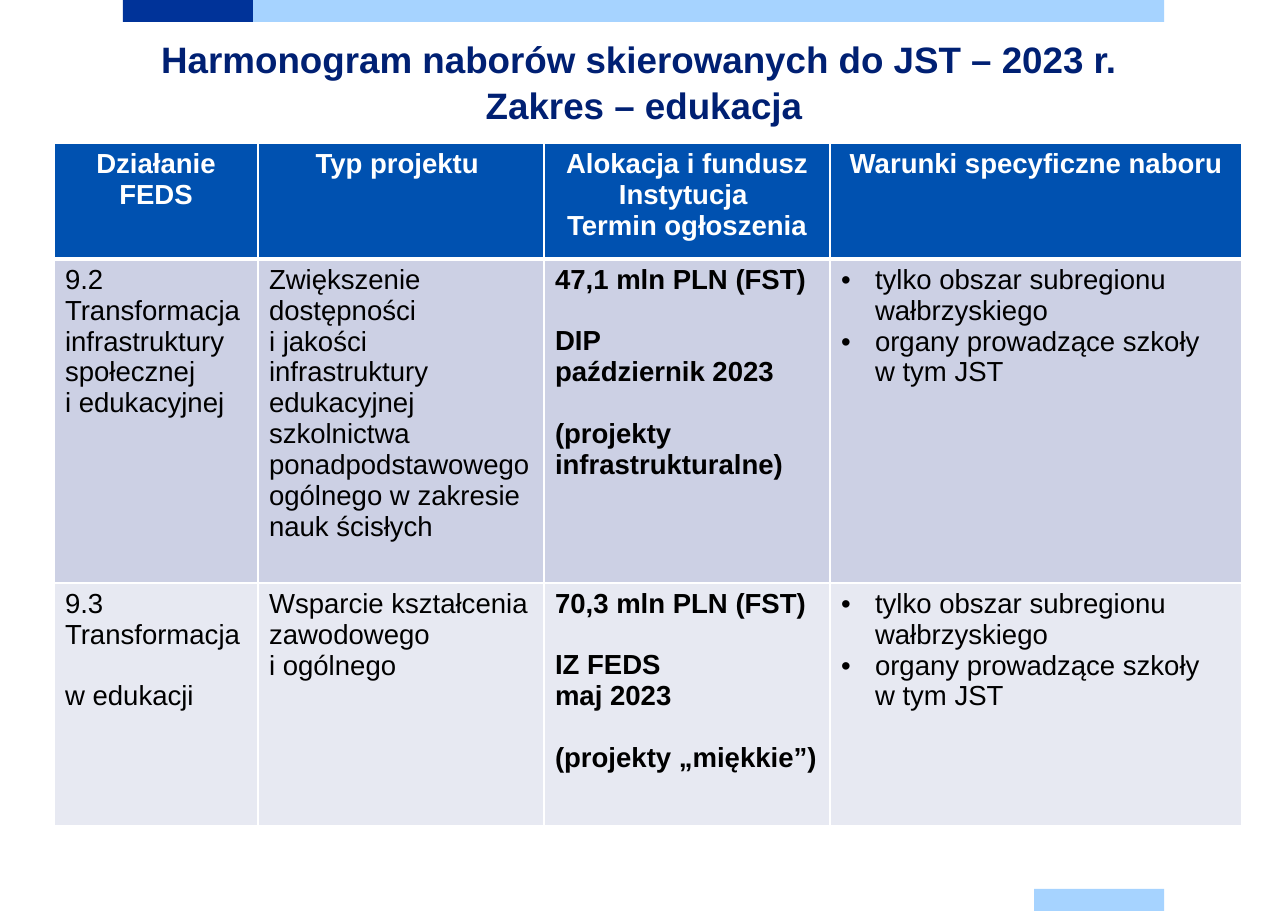
from lxml import etree
from pptx import Presentation
from pptx.dml.color import RGBColor
from pptx.enum.shapes import MSO_SHAPE
from pptx.enum.text import MSO_ANCHOR, MSO_AUTO_SIZE, PP_ALIGN
from pptx.oxml.ns import qn
from pptx.util import Emu, Pt

PX = 8298
RECTANGLE = MSO_SHAPE.RECTANGLE
LEFT, CENTER = PP_ALIGN.LEFT, PP_ALIGN.CENTER
MIDDLE = MSO_ANCHOR.MIDDLE
NO_AUTOFIT = MSO_AUTO_SIZE.NONE

WHITE = RGBColor(0xFF, 0xFF, 0xFF)
BLACK = RGBColor(0x00, 0x00, 0x00)
NAVY = RGBColor(0x00, 0x20, 0x73)
DARK_BLUE = RGBColor(0x00, 0x33, 0x99)
LIGHT_BLUE = RGBColor(0xA6, 0xD3, 0xFF)
HEADER_BLUE = RGBColor(0x00, 0x51, 0xB0)
ROW_FILLS = [HEADER_BLUE, RGBColor(0xCC, 0xD0, 0xE4), RGBColor(0xE7, 0xE9, 0xF2)]

BLANK_LINE = 20
BULLET_INDENT = 34
COLUMN_WIDTHS = [204, 286, 286, 412]
ROW_HEIGHTS = [116, 324, 243]

HEADERS = [
    ["Działanie FEDS"],
    ["Typ projektu "],
    ["Alokacja i fundusz", "Instytucja ", "Termin ogłoszenia"],
    ["Warunki specyficzne naboru"],
]
CONDITIONS = [
    "tylko obszar subregionu wałbrzyskiego",
    "organy prowadzące szkoły\vw tym JST",
]
CALLS = [
    [
        ["9.2 Transformacja infrastruktury społecznej\vi edukacyjnej"],
        ["Zwiększenie dostępności\vi jakości infrastruktury edukacyjnej szkolnictwa "
         "ponadpodstawowego ogólnego w zakresie nauk ścisłych"],
        ["47,1 mln PLN (FST)", "DIP", "październik 2023", "(projekty infrastrukturalne)"],
        CONDITIONS,
    ],
    [
        ["9.3 Transformacja", "w edukacji"],
        ["Wsparcie kształcenia zawodowego\vi ogólnego"],
        ["70,3 mln PLN (FST)", "IZ FEDS", "maj 2023", "(projekty „miękkie”)"],
        CONDITIONS,
    ],
]
BODY_FORMATS = [
    {"gaps": {1: BLANK_LINE}},
    {},
    {"bold": True, "gaps": {1: BLANK_LINE, 3: BLANK_LINE}},
    {"bullet": True},
]


def px(length):
    return Emu(length * PX)


def write(frame, lines, *, size=18, color=BLACK, bold=False, align=LEFT, bullet=False, gaps=None):
    for index, line in enumerate(lines):
        paragraph = frame.add_paragraph() if index else frame.paragraphs[0]
        paragraph.text = line
        paragraph.alignment = align
        paragraph.line_spacing = 1.0
        paragraph.space_before = Pt((gaps or {}).get(index, 0))
        if bullet:
            properties = paragraph._p.get_or_add_pPr()
            properties.set("marL", str(px(BULLET_INDENT)))
            properties.set("indent", str(px(-BULLET_INDENT)))
            etree.SubElement(properties, qn("a:buFont"), typeface="Arial")
            etree.SubElement(properties, qn("a:buChar"), char="•")
        for run in paragraph.runs:
            run.font.name = "Arial"
            run.font.size = Pt(size)
            run.font.bold = bold
            run.font.color.rgb = color


class SlideBuilder:
    def __init__(self, presentation):
        self.slide = presentation.slides.add_slide(presentation.slide_layouts[5])

    def bar(self, left, top, width, height, color):
        bar = self.slide.shapes.add_shape(RECTANGLE, px(left), px(top), px(width), px(height))
        bar.shadow.inherit = False
        bar.fill.solid()
        bar.fill.fore_color.rgb = color
        bar.line.fill.background()

    def title(self, left, top, width, height, lines):
        title = self.slide.shapes.title
        title.left, title.top = px(left), px(top)
        title.width, title.height = px(width), px(height)
        frame = title.text_frame
        frame.word_wrap = True
        frame.auto_size = NO_AUTOFIT
        frame.vertical_anchor = MIDDLE
        write(frame, lines, size=24, color=NAVY, bold=True, align=CENTER, gaps={1: 1})

    def border(self, cell, side, width):
        line = etree.SubElement(cell._tc.get_or_add_tcPr(), qn(f"a:ln{side}"), w=str(Pt(width)))
        fill = etree.SubElement(line, qn("a:solidFill"))
        etree.SubElement(fill, qn("a:srgbClr"), val=str(WHITE))

    def table(self, left, top, rows):
        frame = self.slide.shapes.add_table(
            len(rows), len(COLUMN_WIDTHS), px(left), px(top),
            px(sum(COLUMN_WIDTHS)), px(sum(ROW_HEIGHTS)))
        table = frame.table
        table.horz_banding = False
        for column, width in zip(table.columns, COLUMN_WIDTHS):
            column.width = px(width)
        for row, height in zip(table.rows, ROW_HEIGHTS):
            row.height = px(height)
        for row_index, row in enumerate(rows):
            for column_index, lines in enumerate(row):
                cell = table.cell(row_index, column_index)
                for side in "LRTB":
                    under_header = (row_index, side) in ((0, "B"), (1, "T"))
                    self.border(cell, side, 3 if under_header else 1)
                cell.fill.solid()
                cell.fill.fore_color.rgb = ROW_FILLS[row_index]
                if row_index:
                    write(cell.text_frame, lines, **BODY_FORMATS[column_index])
                else:
                    write(cell.text_frame, lines, color=WHITE, bold=True, align=CENTER)


def main():
    presentation = Presentation()
    presentation.slide_width, presentation.slide_height = px(1288), px(911)
    builder = SlideBuilder(presentation)
    builder.bar(123, 0, 130, 22, DARK_BLUE)
    builder.bar(253, 0, 911, 22, LIGHT_BLUE)
    builder.bar(1034, 889, 130, 22, LIGHT_BLUE)
    builder.title(123, 32, 1042, 100, [
        "Harmonogram naborów skierowanych do JST – 2023 r. ",
        "Zakres – edukacja",
    ])
    builder.table(54, 143, [HEADERS, *CALLS])
    presentation.save("out.pptx")


if __name__ == "__main__":
    main()
